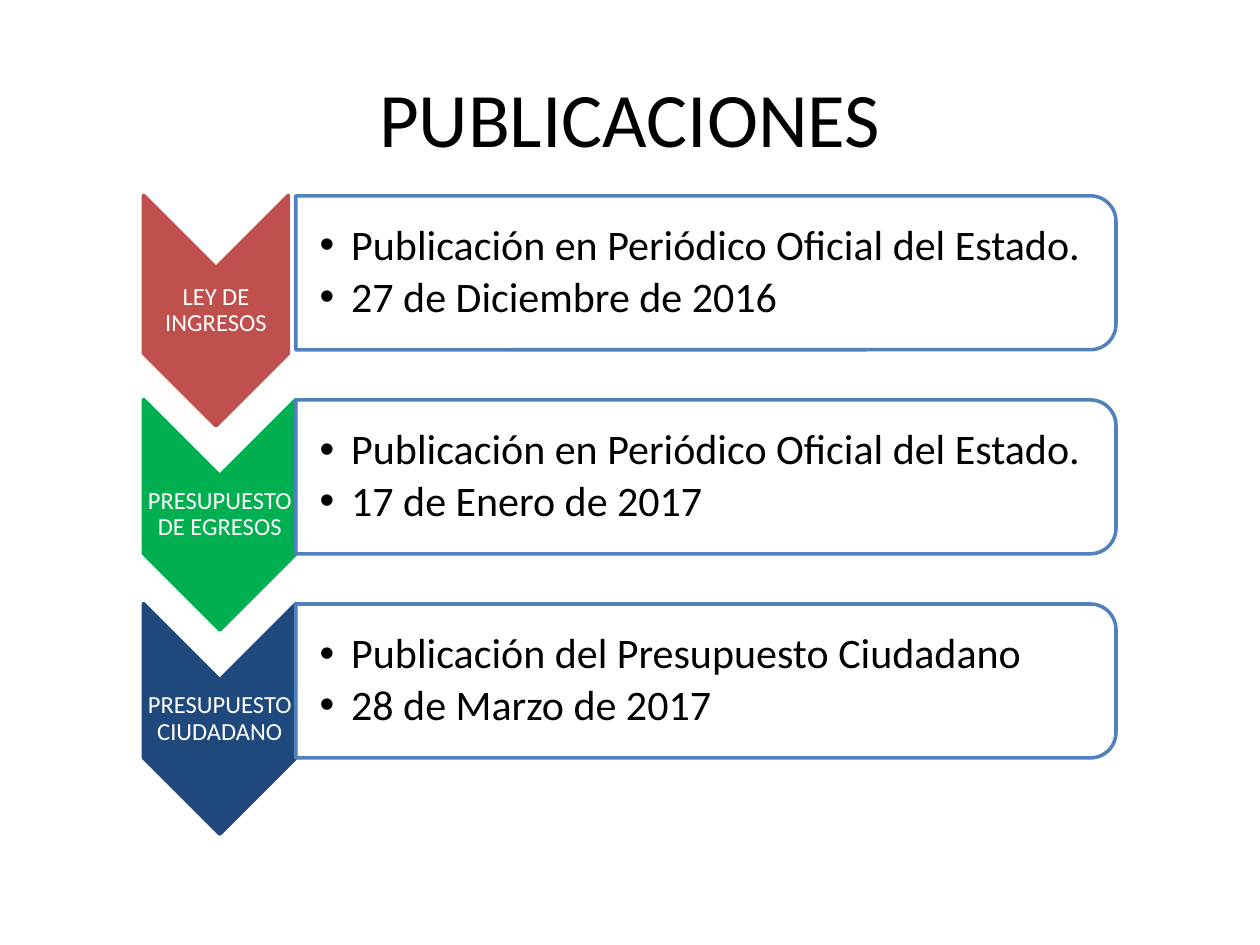
from dataclasses import dataclass

from lxml.etree import SubElement
from pptx import Presentation
from pptx.dml.color import RGBColor as RGB
from pptx.enum.shapes import MSO_SHAPE as SHAPE
from pptx.enum.text import MSO_ANCHOR as ANCHOR, PP_ALIGN as ALIGN
from pptx.oxml.ns import qn
from pptx.util import Pt


@dataclass(frozen=True)
class Theme:
    font: str = "Calibri"
    black: str = "000000"
    white: str = "FFFFFF"
    border: str = "4F81BD"
    red: str = "C0504D"
    green: str = "00B050"
    navy: str = "1F497D"
    title_size: int = 44
    label_size: int = 14
    body_size: int = 24
    line_width: int = 2


T = Theme()

# Layout in points
ROW_PITCH = 116.64
CHEVRON_LEFT, CHEVRON_MIDDLE, CHEVRON_HEIGHT = 82, 177.5, 131.8
BOX_LEFT, BOX_MIDDLE, BOX_WIDTH, BOX_HEIGHT = 169, 155.9, 468.7, 88

# Chevron label, chevron colour, chevron width, label height, bullets
ROWS = [
    ("LEY DE INGRESOS", T.red, 82.8, 49,
     ["Publicación en Periódico Oficial del Estado.", "27 de Diciembre de 2016"]),
    ("PRESUPUESTO DE EGRESOS", T.green, 87.2, 44.6,
     ["Publicación en Periódico Oficial del Estado.", "17 de Enero de 2017"]),
    ("PRESUPUESTO CIUDADANO", T.navy, 87.2, 44.6,
     ["Publicación del Presupuesto Ciudadano", "28 de Marzo de 2017"]),
]


def set_all(obj, values):
    for name, value in values.items():
        setattr(obj, name, value)


def add_bullet(p):
    pPr = p._p.get_or_add_pPr()
    pPr.set("marL", str(Pt(18)))
    pPr.set("indent", str(Pt(-18)))
    SubElement(pPr, qn("a:buFont"), typeface="Arial")
    SubElement(pPr, qn("a:buChar"), char="•")


def add_text(s, box, lines, size, color, insets, para, bullets=False):
    """Add a vertically centred text box, one paragraph per line."""
    tf = s.shapes.add_textbox(*map(Pt, box)).text_frame
    left, top, right, bottom = map(Pt, insets)
    set_all(tf, {"word_wrap": True, "vertical_anchor": ANCHOR.MIDDLE,
                 "margin_left": left, "margin_top": top,
                 "margin_right": right, "margin_bottom": bottom})
    for i, line in enumerate(lines):
        p = tf.add_paragraph() if i else tf.paragraphs[0]
        set_all(p, para)
        if bullets:
            add_bullet(p)
        r = p.add_run()
        r.text = line
        set_all(r.font, {"name": T.font, "size": Pt(size)})
        r.font.color.rgb = RGB.from_string(color)


def add_turned_shape(s, kind, left, middle, width, height, fill, line):
    """Add a shape turned 90°; width and height are those seen after turning."""
    x, y = left + (width - height) / 2, middle - width / 2
    sp = s.shapes.add_shape(kind, Pt(x), Pt(y), Pt(height), Pt(width))
    sp.rotation = 90
    sp.shadow.inherit = False
    sp.fill.solid()
    sp.fill.fore_color.rgb = RGB.from_string(fill)
    sp.line.color.rgb = RGB.from_string(line)
    sp.line.width = Pt(T.line_width)
    return sp


def add_chevron(s, middle, width, label, label_height, color):
    add_turned_shape(s, SHAPE.CHEVRON, CHEVRON_LEFT, middle, width,
                     CHEVRON_HEIGHT, color, color)
    add_text(s, (CHEVRON_LEFT, middle - label_height / 2, width, label_height),
             [label], T.label_size, T.white, (0.7,) * 4,
             {"alignment": ALIGN.CENTER, "line_spacing": 0.9,
              "space_after": Pt(4.9)})


def add_detail_box(s, middle, lines):
    sp = add_turned_shape(s, SHAPE.ROUND_2_SAME_RECTANGLE, BOX_LEFT, middle,
                          BOX_WIDTH, BOX_HEIGHT, T.white, T.border)
    # Fill at 90 % opacity
    rgb = sp.fill._xPr.find(qn("a:solidFill")).find(qn("a:srgbClr"))
    SubElement(rgb, qn("a:alpha"), val="90000")
    add_text(s, (BOX_LEFT, middle - 40, 464.4, 80), lines, T.body_size,
             T.black, (13.7, 1.2, 1.2, 1.2),
             {"line_spacing": 0.9, "space_after": Pt(3.6)}, bullets=True)


def main():
    prs = Presentation()
    set_all(prs, {"slide_width": Pt(720), "slide_height": Pt(540)})
    s = prs.slides.add_slide(prs.slide_layouts[6])

    # Title
    add_text(s, (36, 21.6, 648, 90), ["PUBLICACIONES"], T.title_size, T.black,
             (7.2, 3.6, 7.2, 3.6), {"alignment": ALIGN.CENTER})

    # One chevron and detail box per publication
    for i, (label, color, width, label_height, lines) in enumerate(ROWS):
        offset = i * ROW_PITCH
        add_chevron(s, CHEVRON_MIDDLE + offset, width, label, label_height, color)
        add_detail_box(s, BOX_MIDDLE + offset, lines)

    prs.save("out.pptx")


if __name__ == "__main__":
    main()
